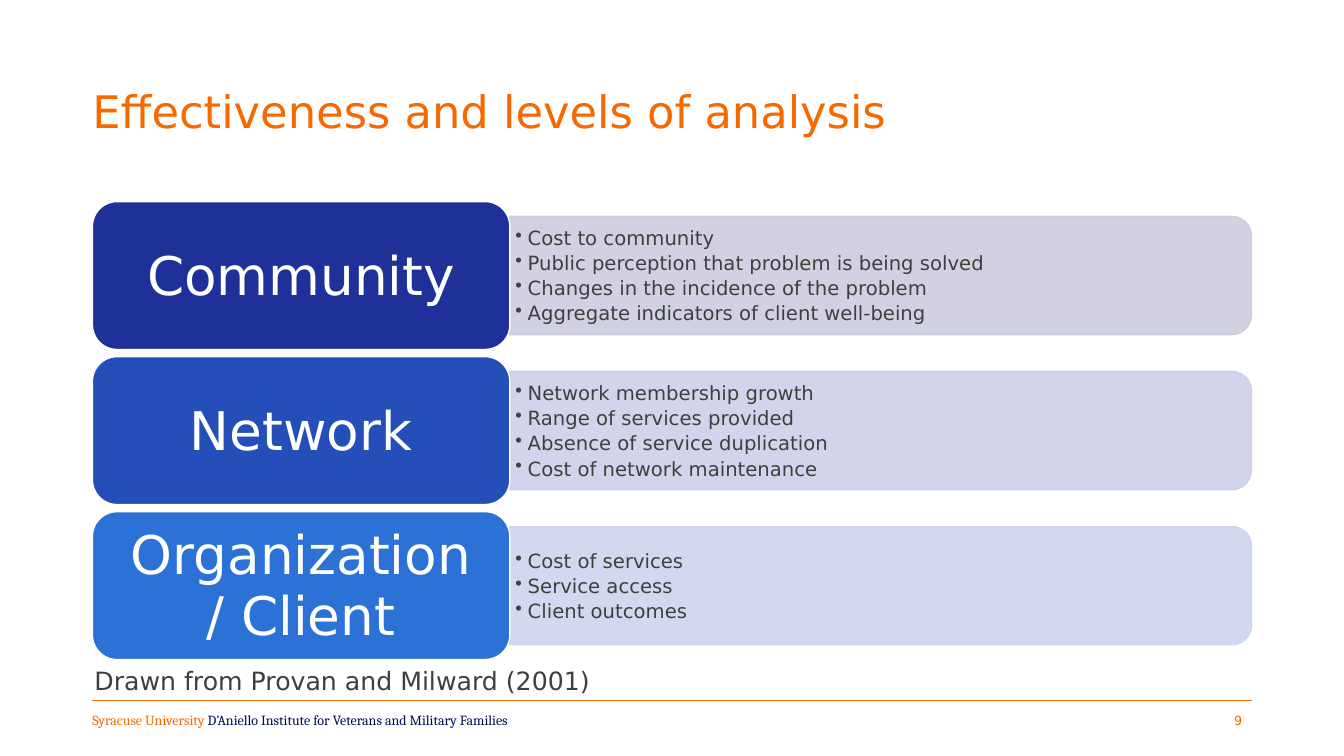
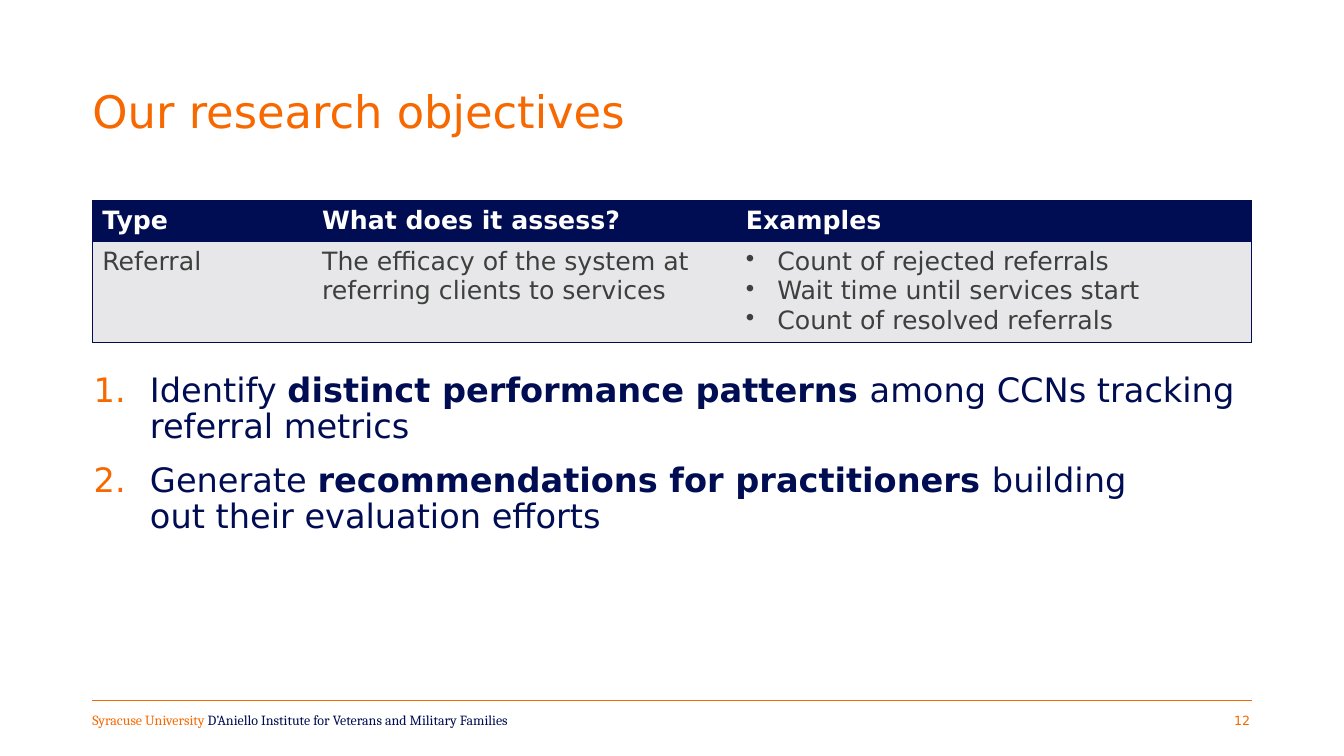
from dataclasses import dataclass

from lxml import etree
from pptx import Presentation
from pptx import util as u
from pptx.dml.color import RGBColor
from pptx.enum import shapes, text
from pptx.oxml import ns


@dataclass(frozen=True)
class Theme:
    sans: str = "DejaVu Sans"
    serif: str = "Cambria"
    orange: str = "F76900"
    navy: str = "000D53"
    gray: str = "3E403E"
    white: str = "FFFFFF"
    row_fill: str = "E7E7E9"
    title_size: float = 32
    label_size: float = 38
    list_size: float = 24
    body_size: float = 18
    bullet_size: float = 14
    footer_size: float = 10
    number_size: float = 9


@dataclass(frozen=True)
class Box:
    left: float
    top: float
    width: float
    height: float

    def lengths(self):
        return [u.Cm(n) for n in (self.left, self.top, self.width, self.height)]


THEME = Theme()
LEFT, WIDTH = 2.33, 29.21

LEVELS = [
    (["Community"], "1F3199", "CCCDDE", [
        "Cost to community",
        "Public perception that problem is being solved",
        "Changes in the incidence of the problem",
        "Aggregate indicators of client well-being"]),
    (["Network"], "244EB8", "CCD0E8", [
        "Network membership growth",
        "Range of services provided",
        "Absence of service duplication",
        "Cost of network maintenance"]),
    (["Organization", "/ Client"], "2B71D6", "CDD4EF", [
        "Cost of services", "Service access", "Client outcomes"]),
]

TABLE_ROWS = [
    [["Type"], ["What does it assess?"], ["Examples"]],
    [["Referral"],
     ["The efficacy of the system at referring clients to services"],
     ["Count of rejected referrals", "Wait time until services start",
      "Count of resolved referrals"]],
]

# Each objective: text before, bold text, text after, right margin in cm
OBJECTIVES = [
    ("Identify ", "distinct performance patterns ",
     "among CCNs tracking referral metrics", 0),
    ("Generate ", "recommendations for practitioners ",
     "building out their evaluation efforts", 2),
]


# Text helpers
def add_run(paragraph, words, size, color, font=THEME.sans, bold=False):
    run = paragraph.add_run()
    run.text = words
    run.font.name = font
    run.font.size = u.Pt(size)
    run.font.bold = bold
    run.font.color.rgb = RGBColor.from_string(color)


def paragraphs(frame, count):
    """Yield the first paragraph of the frame, then new ones."""
    for index in range(count):
        yield frame.paragraphs[0] if index == 0 else frame.add_paragraph()


def set_frame(frame, anchor=text.MSO_ANCHOR.TOP):
    frame.word_wrap = True
    frame.auto_size = text.MSO_AUTO_SIZE.NONE
    frame.vertical_anchor = anchor
    frame.margin_left = frame.margin_right = 0
    frame.margin_top = frame.margin_bottom = 0
    return frame


def add_marker(paragraph, indent, hanging, tag, color=None, **attributes):
    properties = paragraph._p.get_or_add_pPr()
    properties.set("marL", str(u.Cm(indent)))
    properties.set("indent", str(-u.Cm(hanging)))
    if color:
        holder = etree.SubElement(properties, ns.qn("a:buClr"))
        etree.SubElement(holder, ns.qn("a:srgbClr"), val=color)
    etree.SubElement(properties, ns.qn(tag), **attributes)


def add_text_box(slide, box, anchor=text.MSO_ANCHOR.TOP):
    return set_frame(slide.shapes.add_textbox(*box.lengths()).text_frame, anchor)


def place(shape, box):
    shape.left, shape.top, shape.width, shape.height = box.lengths()


# Shared slide parts
def add_title(slide, box, words):
    place(slide.shapes.title, box)
    frame = set_frame(slide.shapes.title.text_frame)
    frame.paragraphs[0].alignment = text.PP_ALIGN.LEFT
    add_run(frame.paragraphs[0], words, THEME.title_size, THEME.orange)


def add_footer(slide, box, number):
    rule = slide.shapes.add_connector(
        shapes.MSO_CONNECTOR.STRAIGHT, u.Cm(box.left), u.Cm(box.top),
        u.Cm(box.left + box.width), u.Cm(box.top))
    rule.line.color.rgb = RGBColor.from_string(THEME.orange)
    rule.line.width = u.Pt(0.5)
    etree.SubElement(rule._element.spPr, ns.qn("a:effectLst"))

    name = add_text_box(slide, Box(box.left, box.top + 0.28, 12, box.height))
    add_run(name.paragraphs[0], "Syracuse University ",
            THEME.footer_size, THEME.orange, THEME.serif)
    add_run(name.paragraphs[0],
            "D’Aniello Institute for Veterans and Military Families",
            THEME.footer_size, THEME.navy, THEME.serif)

    page = add_text_box(slide, Box(box.left + box.width - 0.44, box.top + 0.32,
                                   0.8, box.height))
    add_run(page.paragraphs[0], str(number), THEME.number_size, THEME.orange)


def new_slide(presentation, layout, title, title_width, number):
    slide = presentation.slides.add_slide(presentation.slide_layouts[layout])
    add_title(slide, Box(LEFT, 2.12, title_width, 1.42), title)
    add_footer(slide, Box(LEFT, 17.65, WIDTH, 0.5), number)
    return slide


# Levels diagram
def add_panel(slide, kind, box, fill, line):
    panel = slide.shapes.add_shape(kind, *box.lengths())
    panel.shadow.inherit = False
    panel.fill.solid()
    panel.fill.fore_color.rgb = RGBColor.from_string(fill)
    panel.line.color.rgb = RGBColor.from_string(line)
    panel.line.width = u.Pt(1)
    return panel


def add_level(slide, box, label_lines, label_color, bar_color, points):
    label_width, bar_height = 10.52, 2.98
    bar = Box(box.left + label_width, box.top + (box.height - bar_height) / 2,
              box.width - label_width, bar_height)

    # Bar rounded on its right side: an upright shape turned a quarter
    upright = Box(bar.left + (bar.width - bar.height) / 2,
                  bar.top + (bar.height - bar.width) / 2, bar.height, bar.width)
    panel = add_panel(slide, shapes.MSO_SHAPE.ROUND_2_SAME_RECTANGLE,
                      upright, bar_color, bar_color)
    panel.rotation = 90
    color = panel.fill._xPr.find(".//" + ns.qn("a:srgbClr"))
    etree.SubElement(color, ns.qn("a:alpha"), val="90000")

    # Bullets
    frame = add_text_box(slide, Box(bar.left + 0.1, bar.top, bar.width - 0.4,
                                    bar.height), text.MSO_ANCHOR.MIDDLE)
    for index, paragraph in enumerate(paragraphs(frame, len(points))):
        paragraph.space_before = u.Pt(1.1 if index else 0)
        add_marker(paragraph, 0.35, 0.31, "a:buChar", char="•")
        add_run(paragraph, points[index], THEME.bullet_size, THEME.gray)

    # Label
    label = add_panel(slide, shapes.MSO_SHAPE.ROUNDED_RECTANGLE,
                      Box(box.left, box.top, label_width, box.height),
                      label_color, THEME.white)
    frame = set_frame(label.text_frame, text.MSO_ANCHOR.MIDDLE)
    for line, paragraph in zip(label_lines, paragraphs(frame, len(label_lines))):
        paragraph.alignment = text.PP_ALIGN.CENTER
        paragraph.line_spacing = u.Pt(43.5)
        add_run(paragraph, line, THEME.label_size, THEME.white)


def add_levels(slide, box):
    gap = 0.18
    height = (box.height - gap * (len(LEVELS) - 1)) / len(LEVELS)
    for index, level in enumerate(LEVELS):
        top = box.top + index * (height + gap)
        add_level(slide, Box(box.left, top, box.width, height), *level)


# Referral table
def set_borders(cell, sides):
    properties = cell._tc.get_or_add_tcPr()
    for side in "LRTB":
        line = etree.SubElement(properties, ns.qn("a:ln" + side), w=str(u.Pt(1)))
        if side in sides:
            fill = etree.SubElement(line, ns.qn("a:solidFill"))
            etree.SubElement(fill, ns.qn("a:srgbClr"), val=THEME.navy)
        else:
            etree.SubElement(line, ns.qn("a:noFill"))


def add_referral_table(slide, box):
    table = slide.shapes.add_table(2, 3, *box.lengths()).table
    table.horz_banding = False
    for column, share in zip(table.columns, (4.27, 11.5, 13.44)):
        column.width = u.Cm(share)
    header_height = 1.04
    table.rows[0].height = u.Cm(header_height)
    table.rows[1].height = u.Cm(box.height - header_height)
    indents = (0.25, 1.52, 0.7)

    for row, contents in enumerate(TABLE_ROWS):
        header = row == 0
        for column, lines in enumerate(contents):
            cell = table.cell(row, column)
            set_borders(cell, ("T" if header else "B") + ("L", "", "R")[column])
            cell.fill.solid()
            cell.fill.fore_color.rgb = RGBColor.from_string(
                THEME.navy if header else THEME.row_fill)
            cell.margin_left = u.Cm(indents[column])
            cell.margin_top = u.Cm(0.13)
            cell.margin_right = cell.margin_bottom = 0
            for line, paragraph in zip(
                    lines, paragraphs(cell.text_frame, len(lines))):
                if len(lines) > 1:
                    add_marker(paragraph, 0.79, 0.79, "a:buChar", char="•")
                add_run(paragraph, line, THEME.body_size,
                        THEME.white if header else THEME.gray, bold=header)


# Numbered objectives
def add_objectives(slide, box):
    body = slide.placeholders[1]
    place(body, box)
    frame = set_frame(body.text_frame)
    for index, paragraph in enumerate(paragraphs(frame, len(OBJECTIVES))):
        before, strong, after, right_margin = OBJECTIVES[index]
        paragraph.line_spacing = u.Pt(25.9)
        paragraph.space_before = u.Pt(12.1 if index else 0)
        add_marker(paragraph, 1.45, 1.42, "a:buAutoNum", THEME.orange,
                   type="arabicPeriod")
        paragraph._p.get_or_add_pPr().set("marR", str(u.Cm(right_margin)))
        for words, bold in ((before, False), (strong, True), (after, False)):
            add_run(paragraph, words, THEME.list_size, THEME.navy, bold=bold)


# Slides
def add_levels_slide(presentation):
    slide = new_slide(presentation, 5, "Effectiveness and levels of analysis",
                      20.04, 9)
    add_levels(slide, Box(LEFT, 5.08, WIDTH, 11.54))
    source = add_text_box(slide, Box(LEFT + 0.05, 16.76, 13, 0.84))
    add_run(source.paragraphs[0], "Drawn from Provan and Milward (2001)",
            THEME.body_size, THEME.gray)


def add_objectives_slide(presentation):
    slide = new_slide(presentation, 1, "Our research objectives", 23.72, 12)
    add_referral_table(slide, Box(LEFT, 5.06, WIDTH, 3.58))
    add_objectives(slide, Box(LEFT, 9.4, 28.8, 4.2))


def main():
    presentation = Presentation()
    presentation.slide_width = u.Cm(33.87)
    presentation.slide_height = u.Cm(19.05)
    add_levels_slide(presentation)
    add_objectives_slide(presentation)
    presentation.save("out.pptx")


if __name__ == "__main__":
    main()
